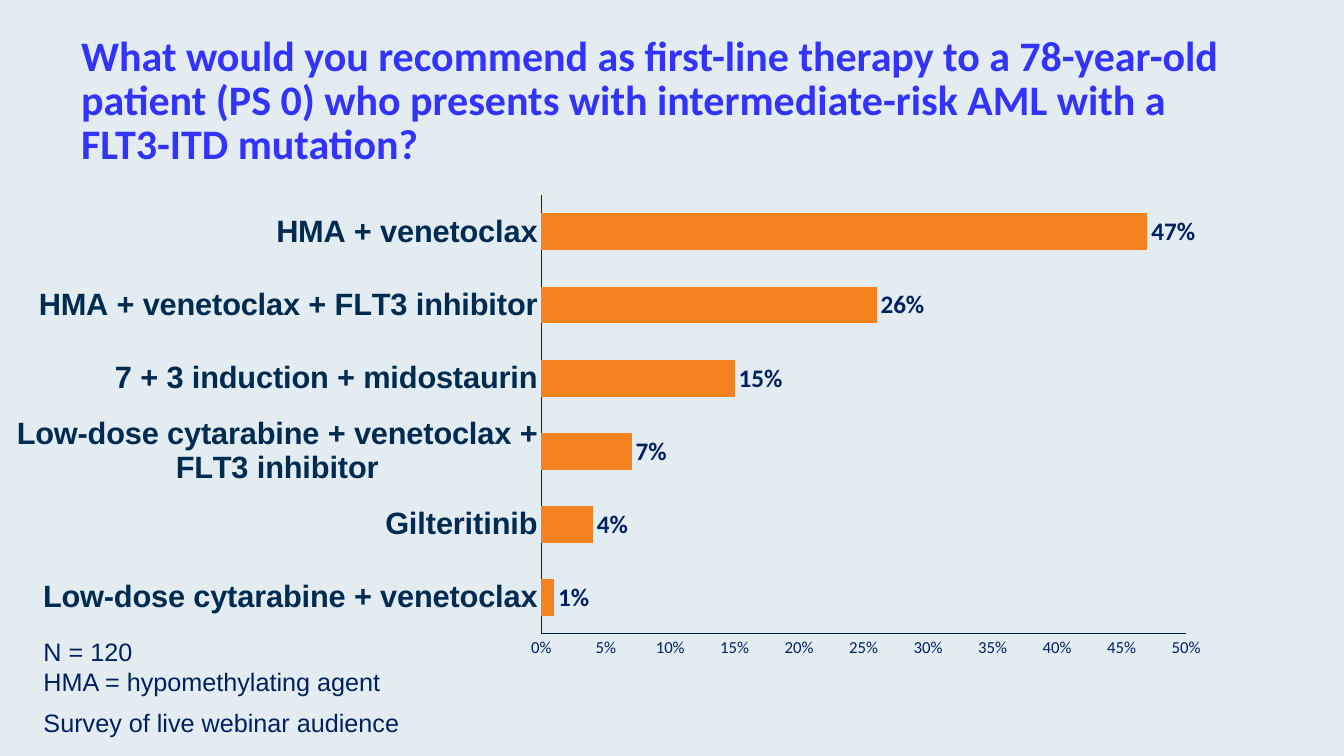
from lxml.etree import SubElement
from pptx import Presentation
from pptx.chart.data import CategoryChartData
from pptx.dml.color import RGBColor
from pptx.enum.chart import XL_CHART_TYPE, XL_LABEL_POSITION, XL_TICK_MARK
from pptx.enum.text import MSO_ANCHOR
from pptx.oxml.ns import qn
from pptx.util import Pt

COLORS = {
    "background": "E2ECF1",
    "title": "3333FF",
    "therapy": "002B50",
    "navy": "002060",
    "bar": "F6821F",
}
QUESTION = (
    "What would you recommend as first-line therapy to a 78-year-old patient (PS 0) "
    "who presents with intermediate-risk AML with a \vFLT3-ITD mutation?"
)
RESPONSES = [
    ("HMA + venetoclax", 0.47),
    ("HMA + venetoclax + FLT3 inhibitor", 0.26),
    ("7 + 3 induction + midostaurin", 0.15),
    ("Low-dose cytarabine + venetoclax + FLT3 inhibitor", 0.07),
    ("Gilteritinib", 0.04),
    ("Low-dose cytarabine + venetoclax", 0.01),
]
FOOTNOTES = ["N = 120", "HMA = hypomethylating agent"]
SURVEY = ["Survey of live webinar audience"]
PLOT_LAYOUT = {"x": 0.43, "y": 0.03, "w": 0.53, "h": 0.89}


def color(name):
    return RGBColor.from_string(COLORS[name])


def style(font, face, size, ink, bold=False):
    font.name, font.size, font.bold = face, Pt(size), bold
    font.color.rgb = color(ink)


def add_text(slide, lines, box, face, size, ink, bold=False):
    frame = slide.shapes.add_textbox(*map(Pt, box)).text_frame
    frame.word_wrap = True
    for index, line in enumerate(lines):
        paragraph = frame.add_paragraph() if index else frame.paragraphs[0]
        paragraph.text = line
        style(paragraph.font, face, size, ink, bold)
    return frame


def place_plot(chart):
    plot_area = chart.element.find(".//" + qn("c:plotArea"))
    for layout in plot_area.findall(qn("c:layout")):
        plot_area.remove(layout)
    layout = SubElement(plot_area, qn("c:layout"))
    plot_area.insert(0, layout)
    manual = SubElement(layout, qn("c:manualLayout"))
    settings = {"layoutTarget": "inner", "xMode": "edge", "yMode": "edge", **PLOT_LAYOUT}
    for tag, value in settings.items():
        SubElement(manual, qn(f"c:{tag}")).set("val", str(value))


def add_responses(slide):
    data = CategoryChartData(number_format="0%")
    therapies, shares = zip(*reversed(RESPONSES))
    data.categories = therapies
    data.add_series("Series 1", shares)
    chart = slide.shapes.add_chart(
        XL_CHART_TYPE.BAR_CLUSTERED, Pt(12), Pt(129), Pt(870), Pt(352), data
    ).chart
    chart.has_legend = chart.has_title = False
    style(chart.font, "Calibri", 10, "navy")
    place_plot(chart)

    for axis in (chart.category_axis, chart.value_axis):
        axis.has_major_gridlines = False
        axis.major_tick_mark = axis.minor_tick_mark = XL_TICK_MARK.NONE
        axis.format.line.color.rgb = color("navy")
        axis.format.line.width = Pt(0.75)
    style(chart.category_axis.tick_labels.font, "Arial", 22, "therapy", True)
    share_axis = chart.value_axis
    style(share_axis.tick_labels.font, "Calibri", 12, "navy")
    share_axis.tick_labels.number_format = "0%"
    share_axis.tick_labels.number_format_is_linked = False
    share_axis.minimum_scale, share_axis.maximum_scale = 0, 0.5
    share_axis.major_unit = 0.05

    bars = chart.plots[0]
    bars.vary_by_categories = False
    bars.gap_width, bars.overlap = 98, -19
    bars.series[0].format.fill.solid()
    bars.series[0].format.fill.fore_color.rgb = color("bar")
    bars.has_data_labels = True
    labels = bars.data_labels
    labels.show_value = True
    labels.position = XL_LABEL_POSITION.OUTSIDE_END
    labels.number_format = "0%"
    labels.number_format_is_linked = False
    style(labels.font, "Calibri", 18, "navy", True)


def main():
    deck = Presentation()
    deck.slide_width, deck.slide_height = Pt(960), Pt(540)
    slide = deck.slides.add_slide(deck.slide_layouts[6])
    slide.background.fill.solid()
    slide.background.fill.fore_color.rgb = color("background")

    title = add_text(slide, [QUESTION], (58, 28, 864, 90), "Calibri", 30, "title", True)
    title.margin_left = title.margin_right = title.margin_top = title.margin_bottom = 0
    title.vertical_anchor = MSO_ANCHOR.MIDDLE
    title.paragraphs[0].line_spacing = 0.88

    add_responses(slide)
    add_text(slide, SURVEY, (24, 502, 271, 29), "Arial", 18, "navy")
    add_text(slide, FOOTNOTES, (24, 451, 360, 51), "Arial", 18, "navy")
    deck.save("out.pptx")


if __name__ == "__main__":
    main()
